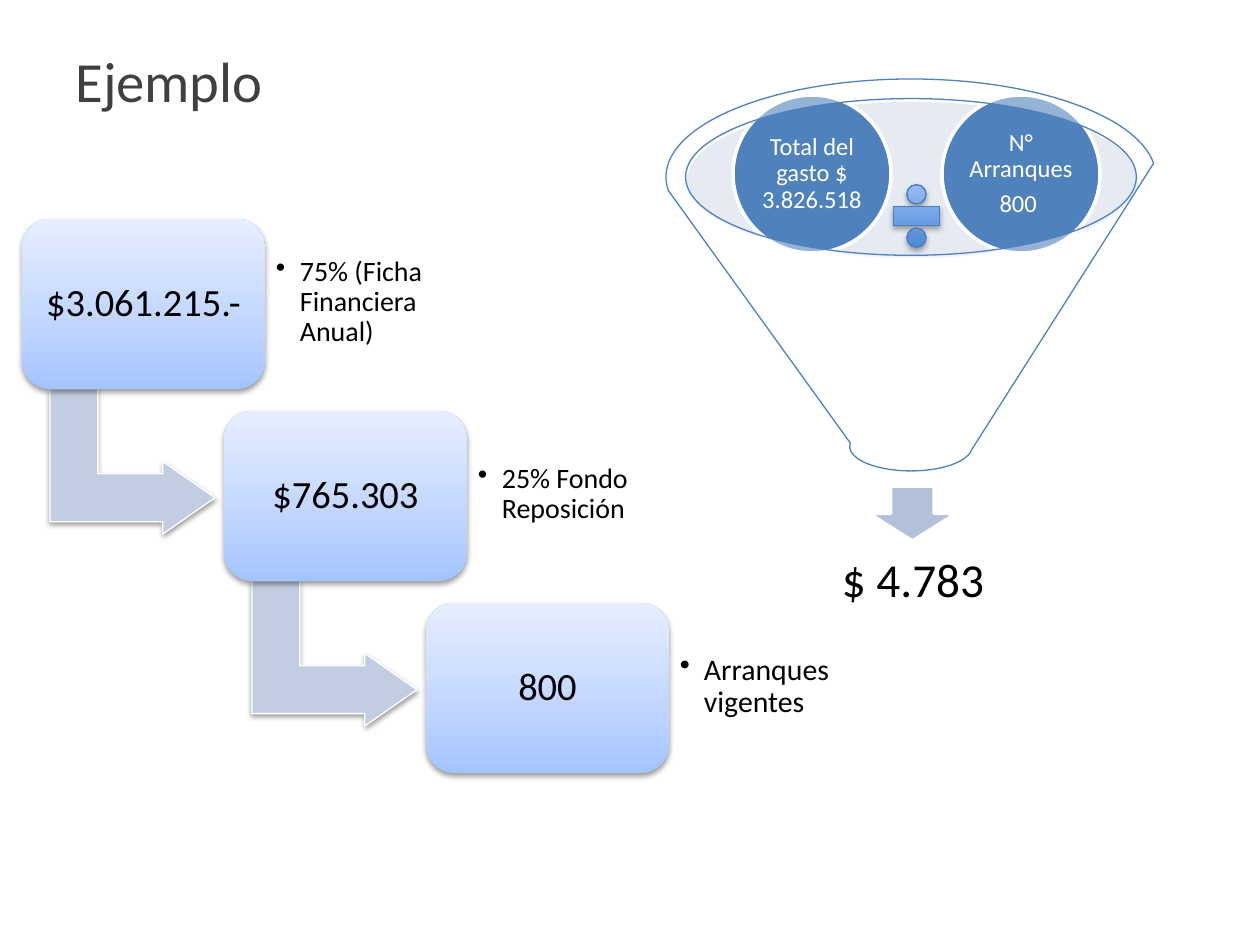
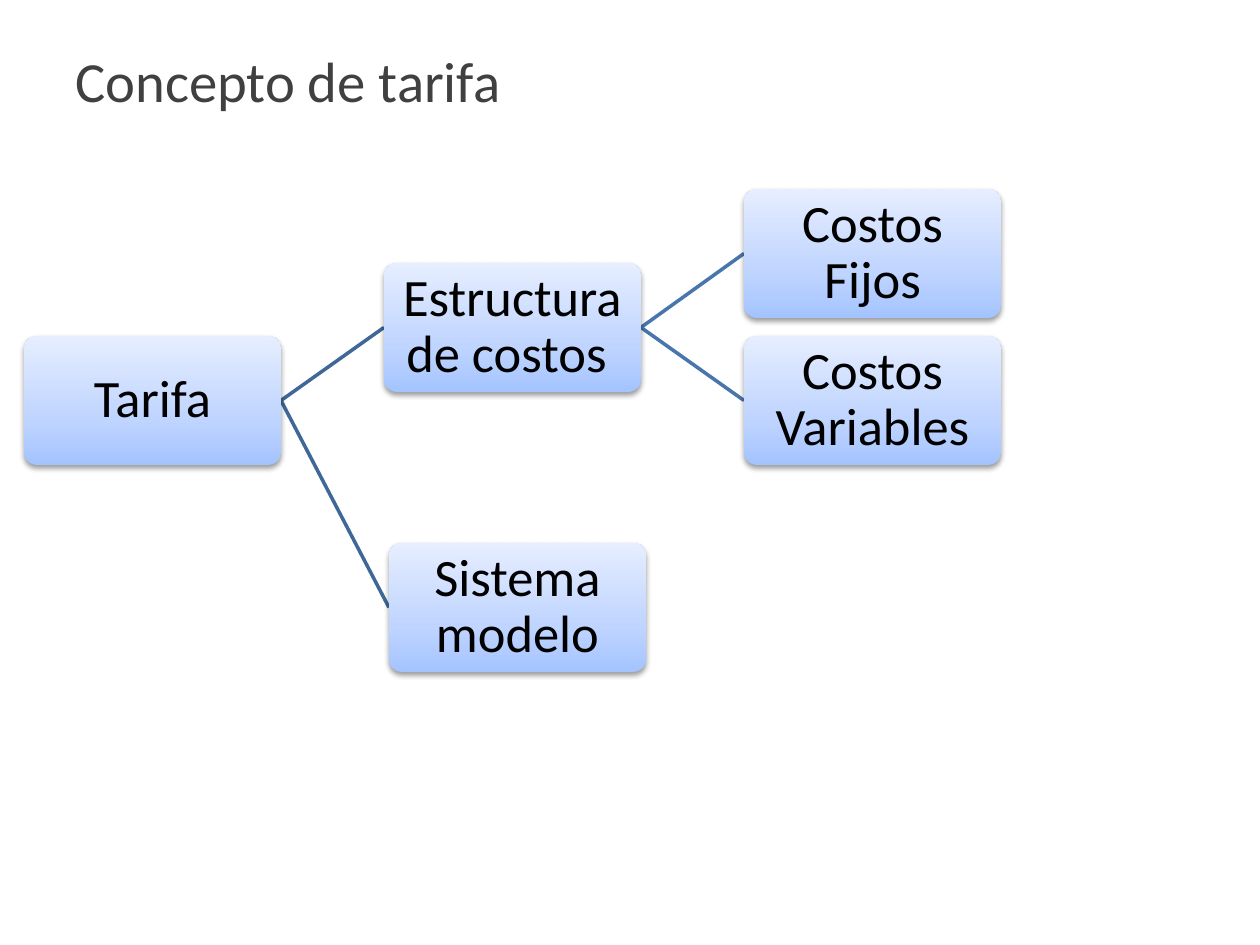
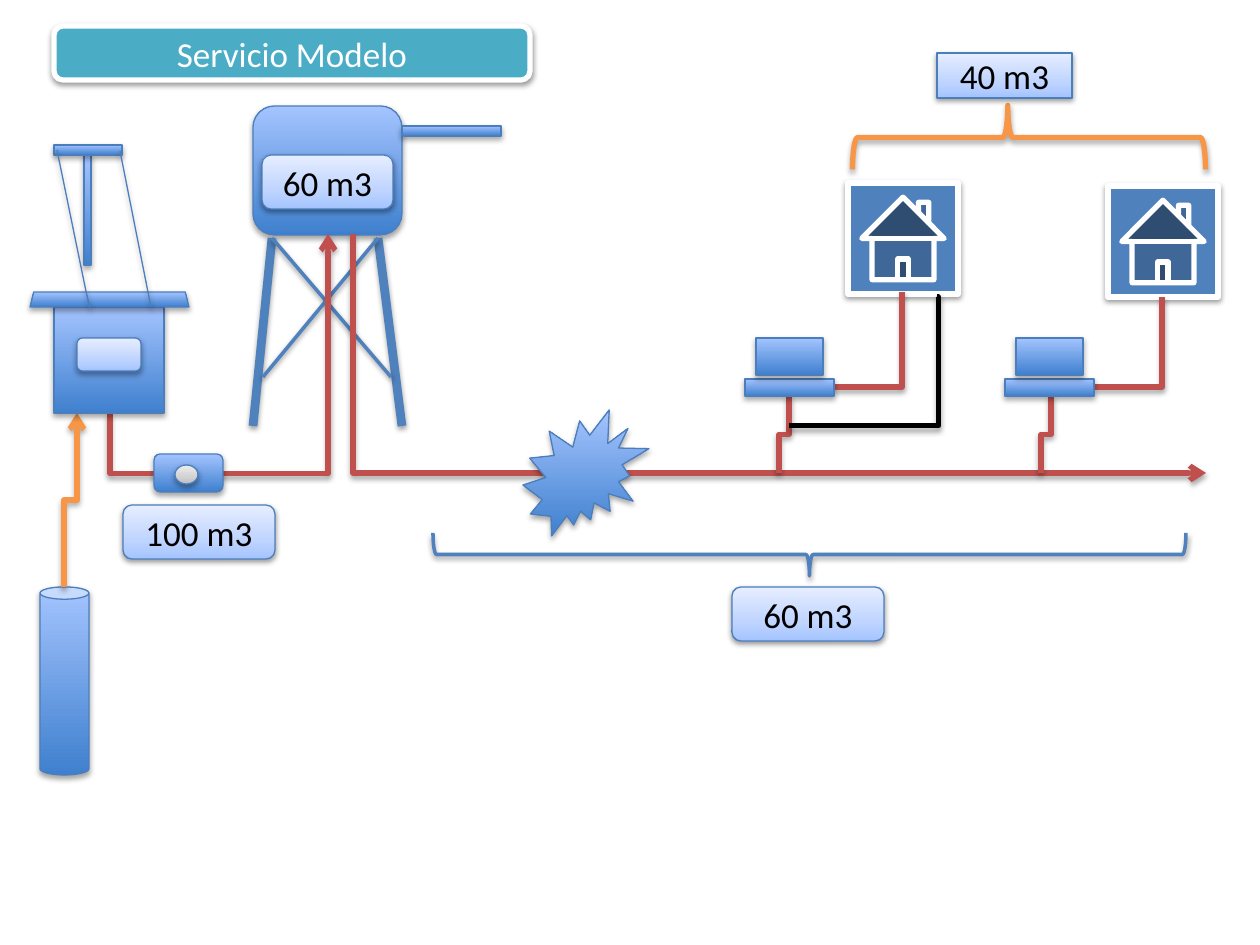
from lxml import etree
from pptx import Presentation
from pptx import util as u
from pptx.dml.color import RGBColor
from pptx.enum import shapes, text
from pptx.oxml.ns import qn

FONT = "Calibri"
SCALE = u.Inches(1) / 126
KIND = shapes.MSO_SHAPE

COLORS = {
    "white": "FFFFFF", "black": "000000", "title": "404040",
    "blue": "4F81BD", "outline": "4B7EBC", "mist": "C2CDE1", "haze": "B3C1DB",
    "branch": "3F6797", "twig": "4875AC",
    "teal": "4BACC6", "orange": "F79646", "red": "C0504D",
}
GRADIENTS = {
    "pale": [(0, "A4C4FF"), (35, "BFD4FF"), (100, "E6EEFF")],
    "deep": [(0, "3F80CE"), (100, "A4C4FF")],
    "grey": [(0, "BDBDBD"), (35, "D1D1D1"), (100, "EEEEEE")],
}
# Shadow strength: distance in EMU, opacity in percent
SHADOWS = {"soft": (20000, 38), "firm": (23000, 35)}

# Slide 1: stepped boxes and funnel
STEPS = [
    ("$3.061.215.-", "75% (Ficha Financiera Anual)", 16),
    ("$765.303", "25% Fondo Reposición", 16),
    ("800", "Arranques vigentes", 17),
]
FUNNEL_BALLS = [
    (733, ["Total del gasto $ 3.826.518"]),
    (942, ["N° Arranques ", "800 "]),
]
FUNNEL_RESULT = "$ 4.783"

# Slide 2: concept tree
CONCEPTS = {
    "Tarifa": (24, 336),
    "Estructura de costos ": (384, 263),
    "Costos Fijos": (744, 189),
    "Costos Variables": (744, 336),
    "Sistema modelo": (389, 543),
}
BRANCHES = [
    ("Tarifa", "Estructura de costos ", "branch"),
    ("Tarifa", "Sistema modelo", "branch"),
    ("Estructura de costos ", "Costos Fijos", "twig"),
    ("Estructura de costos ", "Costos Variables", "twig"),
]

# Slide 3: water network
TANK = (253, 106, 149, 129)
TOWER_LEGS = [
    ((272, 238), (253, 426), 5), ((378, 238), (402, 426), 5),
    ((272, 238), (391, 377), 2), ((378, 238), (263, 377), 2),
]
WELL = (40, 587, 49, 188)
HOUSES = [(1108, 186), (848, 183)]
METERS = [(745, 379), (1005, 379)]
# start, end, colour, elbow position (None for one corner), vertical first, arrow
PIPES = [
    ((64, 587), (77, 413), "orange", 0.5, True, True),
    ((353, 234), (1206, 473), "red", 0, False, True),
    ((779, 473), (789, 396), "red", 0.5, True, False),
    ((1041, 473), (1051, 396), "red", 0.5, True, False),
    ((833, 387), (902, 292), "red", None, False, False),
    ((1095, 387), (1162, 297), "red", None, False, False),
    ((110, 413), (328, 234), "red", -0.34, True, True),
    ((789, 426), (937, 297), "black", 1.01, False, False),
]
EQUIPMENT = [
    (KIND.RECTANGLE, (54, 307, 110, 106), "deep"),
    (KIND.ROUNDED_RECTANGLE, (77, 338, 64, 33), "pale"),
    (KIND.TRAPEZOID, (30, 292, 159, 15), "deep"),
    (KIND.ROUNDED_RECTANGLE, (154, 454, 69, 38), "deep"),
    (KIND.OVAL, (175, 465, 23, 19), "grey"),
    (KIND.EXPLOSION2, (523, 410, 126, 126), "deep"),
    (KIND.RECTANGLE, (402, 126, 99, 10), "deep"),
    (KIND.RECTANGLE, (84, 155, 7, 110), "deep"),
    (KIND.RECTANGLE, (54, 145, 68, 10), "deep"),
]
VOLUMES = [
    ("40 m3", KIND.RECTANGLE, (937, 53, 135, 45)),
    ("100 m3", KIND.ROUNDED_RECTANGLE, (123, 505, 152, 54)),
    ("60 m3", KIND.ROUNDED_RECTANGLE, (732, 587, 152, 54)),
    ("60 m3", KIND.ROUNDED_RECTANGLE, (262, 155, 131, 54)),
]


def px(value):
    return u.Emu(round(value * SCALE))


def rgb(name):
    return RGBColor.from_string(COLORS[name])


def cast_shadow(item, strength):
    """Replace the theme shadow; strength None leaves no shadow."""
    properties = item._element.spPr
    effects = properties.find(qn("a:effectLst"))
    if effects is None:
        effects = etree.SubElement(properties, qn("a:effectLst"))
    if strength:
        distance, opacity = SHADOWS[strength]
        shadow = etree.SubElement(effects, qn("a:outerShdw"), blurRad="40000",
                                  dist=str(distance), dir="5400000", rotWithShape="0")
        color = etree.SubElement(shadow, qn("a:srgbClr"), val=COLORS["black"])
        etree.SubElement(color, qn("a:alpha"), val=str(opacity * 1000))


def paint(shape, fill, opacity):
    if fill is None:
        shape.fill.background()
    elif fill in GRADIENTS:
        shape.fill.gradient()
        shape.fill.gradient_angle = 90
        stops = shape._element.spPr.find(qn("a:gradFill")).find(qn("a:gsLst"))
        for stop in list(stops):
            stops.remove(stop)
        for position, color in GRADIENTS[fill]:
            stop = etree.SubElement(stops, qn("a:gs"), pos=str(position * 1000))
            etree.SubElement(stop, qn("a:srgbClr"), val=color)
    else:
        shape.fill.solid()
        shape.fill.fore_color.rgb = rgb(fill)
        if opacity < 100:
            color = shape._element.spPr.find(qn("a:solidFill"))[0]
            etree.SubElement(color, qn("a:alpha"), val=str(opacity * 1000))


def style(shape, fill, line, width, shadow, opacity=100):
    paint(shape, fill, opacity)
    if line:
        shape.line.color.rgb = rgb(line)
        shape.line.width = u.Pt(width)
    else:
        shape.line.fill.background()
    shape.shadow.inherit = False
    cast_shadow(shape, shadow)


def add_part(page, kind, place, fill, line="outline", width=0.75, shadow=None,
             opacity=100, rotation=0, adjust=()):
    shape = page.shapes.add_shape(kind, *map(px, place))
    style(shape, fill, line, width, shadow, opacity)
    shape.rotation = rotation
    for index, value in enumerate(adjust):
        shape.adjustments[index] = value
    return shape


def write(shape, lines, size, color="black", inset=None, spacing=None,
          align=text.PP_ALIGN.CENTER, bullet=False):
    frame = shape.text_frame
    frame.word_wrap = True
    frame.vertical_anchor = text.MSO_ANCHOR.MIDDLE
    if inset is not None:
        frame.margin_left = frame.margin_right = px(inset)
        frame.margin_top = frame.margin_bottom = px(inset)
    for index, line in enumerate(lines):
        para = frame.paragraphs[0] if index == 0 else frame.add_paragraph()
        para.text = line
        para.alignment = align
        para.line_spacing = spacing
        if index < len(lines) - 1:
            para.space_after = u.Pt(5)
        if bullet:
            properties = para._p.get_or_add_pPr()
            properties.set("marL", str(px(24)))
            properties.set("indent", str(px(-24)))
            etree.SubElement(properties, qn("a:buChar"), char="•")
        para.font.name = FONT
        para.font.size = u.Pt(size)
        para.font.color.rgb = rgb(color)


def add_text(page, place, lines, size, **options):
    write(page.shapes.add_textbox(*map(px, place)), lines, size, **options)


def add_title(page, title):
    add_text(page, (63, 38, 971, 83), [title], 32.4, color="title",
             align=text.PP_ALIGN.LEFT)


def add_line(page, start, end, color, width, shadow=None,
             kind=shapes.MSO_CONNECTOR.STRAIGHT):
    line = page.shapes.add_connector(kind, *map(px, start + end))
    line.line.color.rgb = rgb(color)
    line.line.width = u.Pt(width)
    cast_shadow(line, shadow)
    return line


def add_pipe(page, start, end, color, elbow, vertical_first, arrow):
    pipe = add_line(page, start, end, color, 3, "firm", shapes.MSO_CONNECTOR.ELBOW)
    properties = pipe._element.spPr
    if vertical_first:
        # Turn the frame a quarter about its centre
        (x1, y1), (x2, y2) = start, end
        width, height = abs(y2 - y1), abs(x2 - x1)
        pipe.left, pipe.top = px((x1 + x2 - width) / 2), px((y1 + y2 - height) / 2)
        pipe.width, pipe.height = px(width), px(height)
        frame = properties.find(qn("a:xfrm"))
        frame.set("rot", "5400000")
        frame.set("flipH", str(int(y2 < y1)))
        frame.set("flipV", str(int(x2 > x1)))
    geometry = properties.find(qn("a:prstGeom"))
    if elbow is None:
        geometry.set("prst", "bentConnector2")
    else:
        guides = geometry.find(qn("a:avLst"))
        if guides is None:
            guides = etree.SubElement(geometry, qn("a:avLst"))
        etree.SubElement(guides, qn("a:gd"), name="adj1",
                         fmla=f"val {round(elbow * 100000)}")
    if arrow:
        etree.SubElement(properties.find(qn("a:ln")), qn("a:tailEnd"), type="arrow")


def build_example(page):
    add_title(page, "Ejemplo")
    # Steps going down to the right
    for index, (amount, note, size) in enumerate(STEPS):
        left, top = 22 + 202 * index, 219 + 192 * index
        if index < len(STEPS) - 1:
            add_part(page, KIND.BENT_UP_ARROW, (left + 38, top + 160, 145, 165), "mist",
                     "white", shadow="soft", rotation=90, adjust=(0.33, 0.25, 0.36))
        card = add_part(page, KIND.ROUNDED_RECTANGLE, (left, top, 243, 170), "pale",
                        None, shadow="soft")
        write(card, [amount], 22, inset=11, spacing=0.9)
        add_text(page, (left + 243, top + 15, 178, 137), [note], size, inset=11,
                 spacing=0.9, align=text.PP_ALIGN.LEFT, bullet=True)
    # Funnel
    add_part(page, KIND.OVAL, (687, 102, 451, 156), "mist", None, opacity=40)
    add_part(page, KIND.DOWN_ARROW, (869, 486, 87, 55), "haze", "white", 2)
    add_text(page, (703, 530, 420, 105), [FUNNEL_RESULT], 27, inset=26, spacing=0.9)
    for left, lines in FUNNEL_BALLS:
        ball = add_part(page, KIND.OVAL, (left, 95, 158, 158), "blue", "white", 2)
        write(ball, lines, 14, "white", inset=2, spacing=0.9)
    add_part(page, KIND.FUNNEL, (666, 79, 490, 392), "white", "blue", opacity=40)
    add_part(page, KIND.MATH_DIVIDE, (885, 175, 63, 82), "deep", shadow="firm")


def build_concept(page):
    add_title(page, "Concepto de tarifa")
    width, height = 257, 129
    for parent, child, color in BRANCHES:
        (x1, y1), (x2, y2) = CONCEPTS[parent], CONCEPTS[child]
        add_line(page, (x1 + width, y1 + height / 2), (x2, y2 + height / 2), color, 2)
    for concept, corner in CONCEPTS.items():
        card = add_part(page, KIND.ROUNDED_RECTANGLE, corner + (width, height), "pale",
                        None, shadow="soft", adjust=(0.1,))
        write(card, [concept], 30, inset=2, spacing=0.9)


def build_model(page):
    # Water tower, well and houses
    add_part(page, KIND.ROUNDED_RECTANGLE, TANK, "deep", shadow="firm")
    for start, end, width in TOWER_LEGS:
        add_line(page, start, end, "blue", width, "soft")
    add_part(page, KIND.CAN, WELL, "deep", shadow="firm")
    for corner in HOUSES:
        add_part(page, KIND.ACTION_BUTTON_HOME, corner + (110, 111), "blue", "white", 3,
                 "soft")
    # Pipes, meters and equipment
    for pipe in PIPES:
        add_pipe(page, *pipe)
    for left, top in METERS:
        add_part(page, KIND.RECTANGLE, (left, top, 89, 17), "deep", shadow="firm")
        add_part(page, KIND.RECTANGLE, (left + 11, top - 41, 67, 37), "deep",
                 shadow="firm")
    for kind, place, fill in EQUIPMENT:
        add_part(page, kind, place, fill, shadow="firm")
    # Braces, volumes and heading
    add_part(page, KIND.LEFT_BRACE, (997, -39, 64, 353), None, "orange", 3, "firm",
             rotation=90, adjust=(0.08, 0.56))
    add_part(page, KIND.LEFT_BRACE, (788, 178, 43, 753), None, "blue", 2, "soft",
             rotation=270)
    for volume, kind, place in VOLUMES:
        write(add_part(page, kind, place, "pale", shadow="soft"), [volume], 20)
    heading = add_part(page, KIND.ROUNDED_RECTANGLE, (54, 26, 476, 54), "teal", "white",
                       3, "soft")
    write(heading, ["Servicio Modelo"], 20, "white")
    # Cables of the pump house
    cable = page.shapes.build_freeform(57, 150, scale=SCALE)
    cable.add_line_segments([(87, 296), (90, 308), (87, 295)], close=False)
    style(cable.convert_to_shape(), None, "outline", 0.75, "firm")
    add_line(page, (120, 151), (151, 307), "outline", 0.75, "firm")


def main():
    deck = Presentation()
    deck.slide_width, deck.slide_height = px(1260), px(945)
    for build in (build_example, build_concept, build_model):
        build(deck.slides.add_slide(deck.slide_layouts[6]))
    deck.save("out.pptx")


if __name__ == "__main__":
    main()
